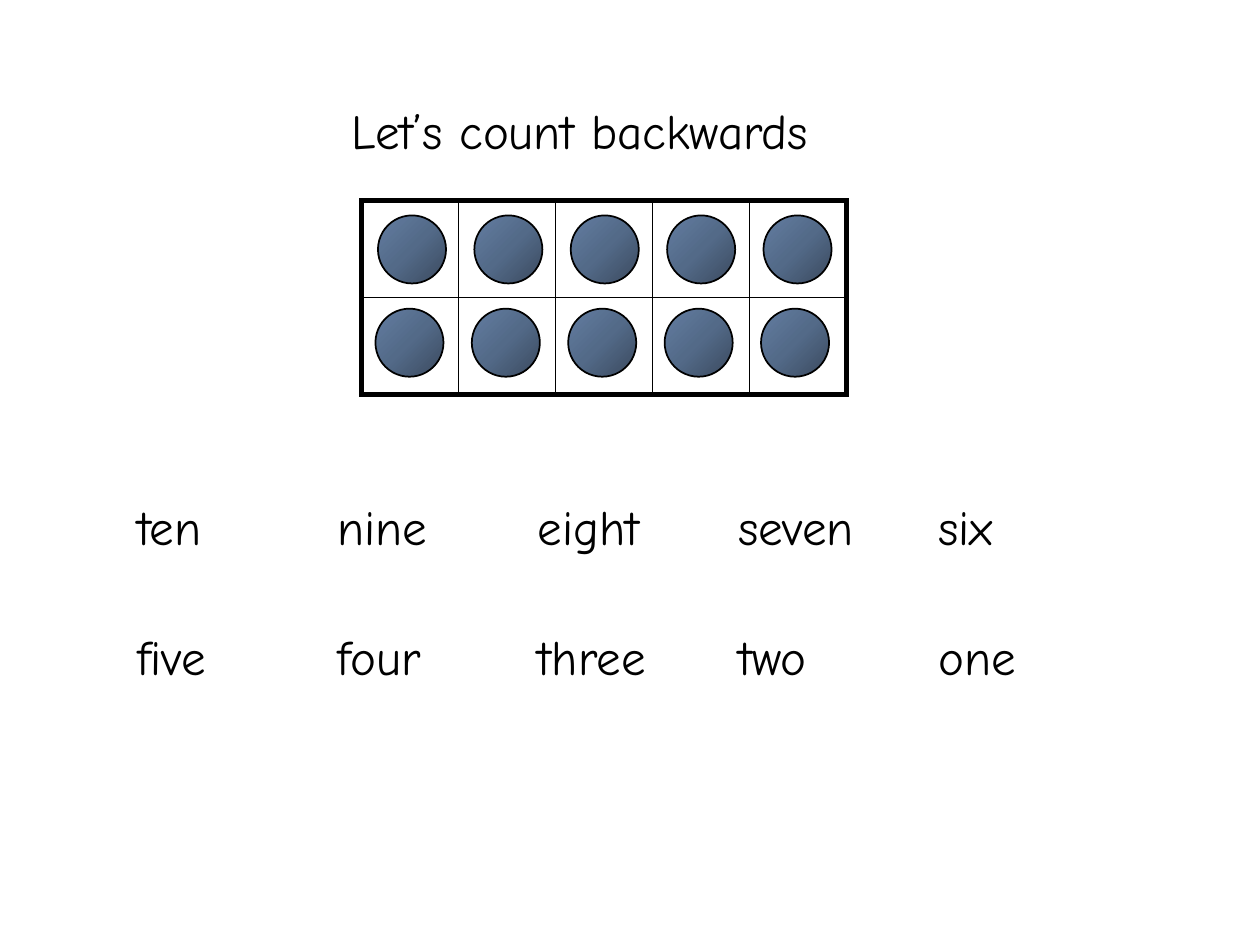
"""Build a counting-backwards slide with a ten frame and number words."""
from dataclasses import dataclass

import pptx
import pptx.dml.color
import pptx.enum.shapes
import pptx.enum.text
import pptx.oxml
import pptx.oxml.ns
import pptx.util

Inches = pptx.util.Inches
Pt = pptx.util.Pt
RGB = pptx.dml.color.RGBColor.from_string


@dataclass(frozen=True)
class Theme:
    font: str = "Comic Neue"
    size: int = 28
    ink: str = "000000"
    shades: tuple = ((0, "3B4A5F"), (50, "536A88"), (100, "637DA1"))
    thin: int = 1
    thick: int = 3


THEME = Theme()
WORDS = (
    ("ten", "nine", "eight", "seven", "six"),
    ("five", "four", "three", "two", "one"),
)
ROWS, COLS = len(WORDS), len(WORDS[0])
CELL = 0.77


def apply(item, values):
    for name, value in values.items():
        setattr(item, name, value)


def make(xml):
    space = pptx.oxml.ns.nsdecls("a")
    return pptx.oxml.parse_xml(xml.replace(">", f" {space}>", 1))


def write(shape, text):
    frame = shape.text_frame
    frame.text = text
    apply(frame, {
        "word_wrap": True,
        "auto_size": pptx.enum.text.MSO_AUTO_SIZE.SHAPE_TO_FIT_TEXT,
        "vertical_anchor": pptx.enum.text.MSO_ANCHOR.TOP,
    })
    line = frame.paragraphs[0]
    line.alignment = pptx.enum.text.PP_ALIGN.LEFT
    apply(line.runs[0].font, {"name": THEME.font, "size": Pt(THEME.size)})
    line.runs[0].font.color.rgb = RGB(THEME.ink)


def add_title(slide, text):
    title = slide.shapes.title
    apply(title, {
        "left": Inches(2.69), "top": Inches(0.75),
        "width": Inches(4.26), "height": Inches(0.57),
    })
    write(title, text)


def add_word(slide, text, left, top):
    box = slide.shapes.add_textbox(
        Inches(left), Inches(top), Inches(1.41), Inches(0.57))
    write(box, text)


def edge(cell, side, width):
    cell._tc.get_or_add_tcPr().append(make(
        f'<a:ln{side} w="{Pt(width)}"><a:solidFill>'
        f'<a:srgbClr val="{THEME.ink}"/></a:solidFill></a:ln{side}>'))


def add_frame(slide, left, top):
    table = slide.shapes.add_table(
        ROWS, COLS, Inches(left), Inches(top),
        Inches(COLS * CELL), Inches(ROWS * CELL)).table
    apply(table, {"first_row": False, "horz_banding": False})
    for col in table.columns:
        col.width = Inches(CELL)
    for r, row in enumerate(table.rows):
        row.height = Inches(CELL)
        for c, cell in enumerate(row.cells):
            outer = {"L": c == 0, "R": c == COLS - 1,
                     "T": r == 0, "B": r == ROWS - 1}
            for side, bold in outer.items():
                edge(cell, side, THEME.thick if bold else THEME.thin)
            cell.fill.background()


def add_dot(slide, left, top):
    dot = slide.shapes.add_shape(
        pptx.enum.shapes.MSO_SHAPE.OVAL,
        Inches(left), Inches(top), Inches(0.54), Inches(0.54))
    dot.shadow.inherit = False
    dot.line.color.rgb = RGB(THEME.ink)
    dot.line.width = Pt(THEME.thin)
    stops = "".join(
        f'<a:gs pos="{pos * 1000}"><a:srgbClr val="{shade}"/></a:gs>'
        for pos, shade in THEME.shades)
    dot._element.spPr.prstGeom.addnext(make(
        f'<a:gradFill><a:gsLst>{stops}</a:gsLst><a:path path="circle">'
        '<a:fillToRect l="100000" t="100000"/></a:path></a:gradFill>'))


def main():
    deck = pptx.Presentation()
    apply(deck, {"slide_width": Inches(10), "slide_height": Inches(7.5)})
    slide = deck.slides.add_slide(deck.slide_layouts[5])
    add_title(slide, "Let’s count backwards")
    add_frame(slide, 2.87, 1.59)
    for r, row in enumerate(WORDS):
        for c, word in enumerate(row):
            add_dot(slide, 3 - 0.02 * r + 0.765 * c, 1.71 + 0.74 * r)
            add_word(slide, word, 0.99 + 1.59 * c, 3.89 + 1.03 * r)
    deck.save("out.pptx")


if __name__ == "__main__":
    main()
